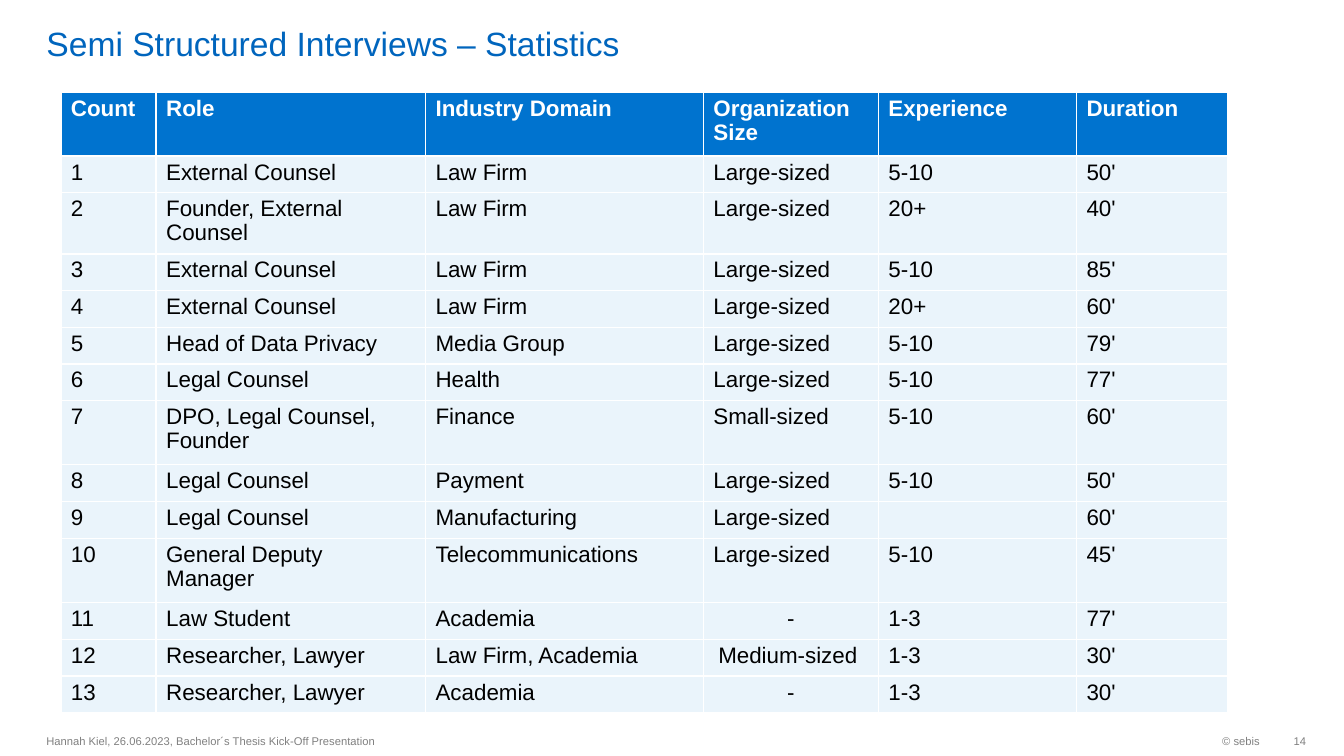
"""Build the interview statistics slide with its table of thirteen interviews."""
from dataclasses import dataclass

from pptx import Presentation
from pptx.dml.color import RGBColor as RGB
from pptx.enum.text import MSO_ANCHOR as Anchor, MSO_AUTO_SIZE as AutoSize, PP_ALIGN as Align
from pptx.util import Pt


@dataclass(frozen=True)
class Theme:
    font: str = "Arial"
    title: RGB = RGB(0x00, 0x65, 0xBD)
    header: RGB = RGB(0x00, 0x73, 0xCF)
    row: RGB = RGB(0xEA, 0xF4, 0xFB)
    white: RGB = RGB(0xFF, 0xFF, 0xFF)
    black: RGB = RGB(0x00, 0x00, 0x00)
    grey: RGB = RGB(0x80, 0x80, 0x80)
    title_size: int = 24
    table_size: int = 16
    footer_size: int = 8


THEME = Theme()


def style(paragraph, size, color, align=Align.LEFT, bold=False):
    """Format all the text of one paragraph."""
    paragraph.alignment = align
    font = paragraph.font
    font.name, font.size, font.bold = THEME.font, Pt(size), bold
    font.color.rgb = color


deck = Presentation()
deck.slide_width, deck.slide_height = Pt(960), Pt(540)
slide = deck.slides.add_slide(deck.slide_layouts[5])

title = slide.shapes.title
title.left, title.top, title.width, title.height = Pt(26), Pt(-12), Pt(834), Pt(57)
heading = title.text_frame
heading.text = "Semi Structured Interviews – Statistics"
heading.auto_size = AutoSize.NONE
heading.vertical_anchor = Anchor.BOTTOM
heading.margin_top = heading.margin_bottom = 0
style(heading.paragraphs[0], THEME.title_size, THEME.title)

FOOTERS = [
    ("© sebis", 739, 168, 7.2, Align.RIGHT),
    ("Hannah Kiel, 26.06.2023, Bachelor´s Thesis Kick-Off Presentation", 26, 454, 7.2, Align.LEFT),
    ("14", 907, 26, 0, Align.RIGHT),
]
for words, left, width, right_margin, align in FOOTERS:
    footer = slide.shapes.add_textbox(Pt(left), Pt(517.5), Pt(width), Pt(23)).text_frame
    footer.text = words
    footer.word_wrap = True
    footer.vertical_anchor = Anchor.MIDDLE
    footer.margin_right = Pt(right_margin)
    style(footer.paragraphs[0], THEME.footer_size, THEME.grey, align)

COLUMNS = [
    ("Count", 68),
    ("Role", 192.5),
    ("Industry Domain", 198.5),
    ("Organization Size", 125),
    ("Experience", 141.5),
    ("Duration", 108),
]
INTERVIEWS = [
    ("External Counsel", "Law Firm", "Large-sized", "5-10", "50'"),
    ("Founder, External Counsel", "Law Firm", "Large-sized", "20+", "40'"),
    ("External Counsel", "Law Firm", "Large-sized", "5-10", "85'"),
    ("External Counsel", "Law Firm", "Large-sized", "20+", "60'"),
    ("Head of Data Privacy", "Media Group", "Large-sized", "5-10", "79'"),
    ("Legal Counsel", "Health", "Large-sized", "5-10", "77'"),
    ("DPO, Legal Counsel, Founder", "Finance", "Small-sized", "5-10", "60'"),
    ("Legal Counsel", "Payment", "Large-sized", "5-10", "50'"),
    ("Legal Counsel", "Manufacturing", "Large-sized", "", "60'"),
    ("General Deputy Manager", "Telecommunications", "Large-sized", "5-10", "45'"),
    ("Law Student", "Academia", "-", "1-3", "77'"),
    ("Researcher, Lawyer", "Law Firm, Academia", "Medium-sized ", "1-3", "30'"),
    ("Researcher, Lawyer", "Academia", "-", "1-3", "30'"),
]
ROW_HEIGHT = 26.2
TALL_ROWS = {0: 45.5, 2: 42.5, 7: 45.9, 10: 45.9}
SIZE_COLUMN = 3
FIRST_CENTERED_ROW = 11

rows = [tuple(name for name, _ in COLUMNS)]
rows += [(str(count), *interview) for count, interview in enumerate(INTERVIEWS, 1)]
heights = [TALL_ROWS.get(r, ROW_HEIGHT) for r in range(len(rows))]
total_width = sum(width for _, width in COLUMNS)

statistics = slide.shapes.add_table(
    len(rows), len(COLUMNS), Pt(43.5), Pt(66), Pt(total_width), Pt(sum(heights))
).table
statistics.horz_banding = False
for column, (_, width) in zip(statistics.columns, COLUMNS):
    column.width = Pt(width)

for r, (entries, height) in enumerate(zip(rows, heights)):
    statistics.rows[r].height = Pt(height)
    is_header = r == 0
    for c, entry in enumerate(entries):
        cell = statistics.cell(r, c)
        cell.text = entry
        cell.fill.solid()
        cell.fill.fore_color.rgb = THEME.header if is_header else THEME.row
        centered = c == SIZE_COLUMN and r >= FIRST_CENTERED_ROW
        line = cell.text_frame.paragraphs[0]
        line.line_spacing = 0.95
        style(
            line,
            THEME.table_size,
            THEME.white if is_header else THEME.black,
            Align.CENTER if centered else Align.LEFT,
            is_header,
        )

deck.save("out.pptx")
